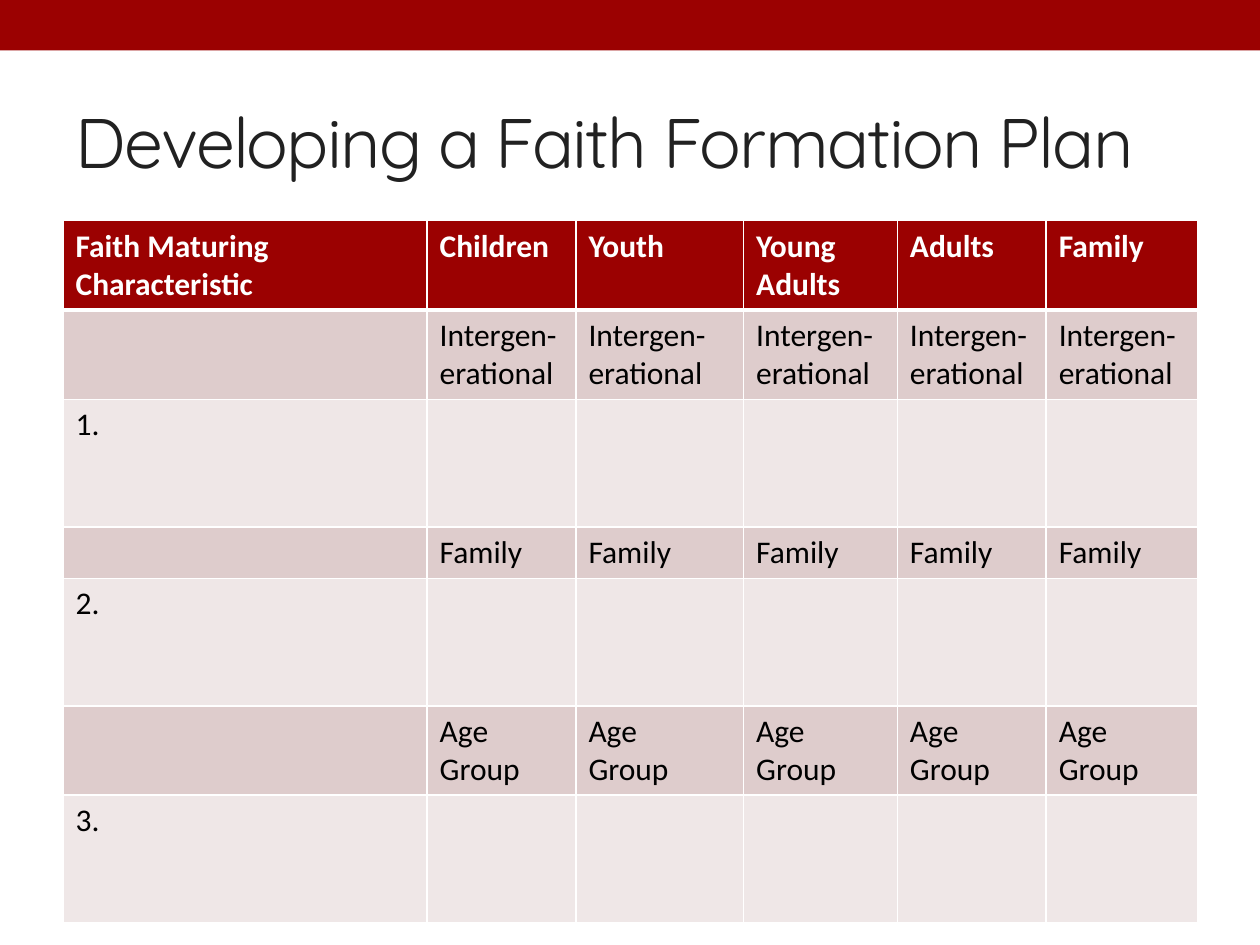
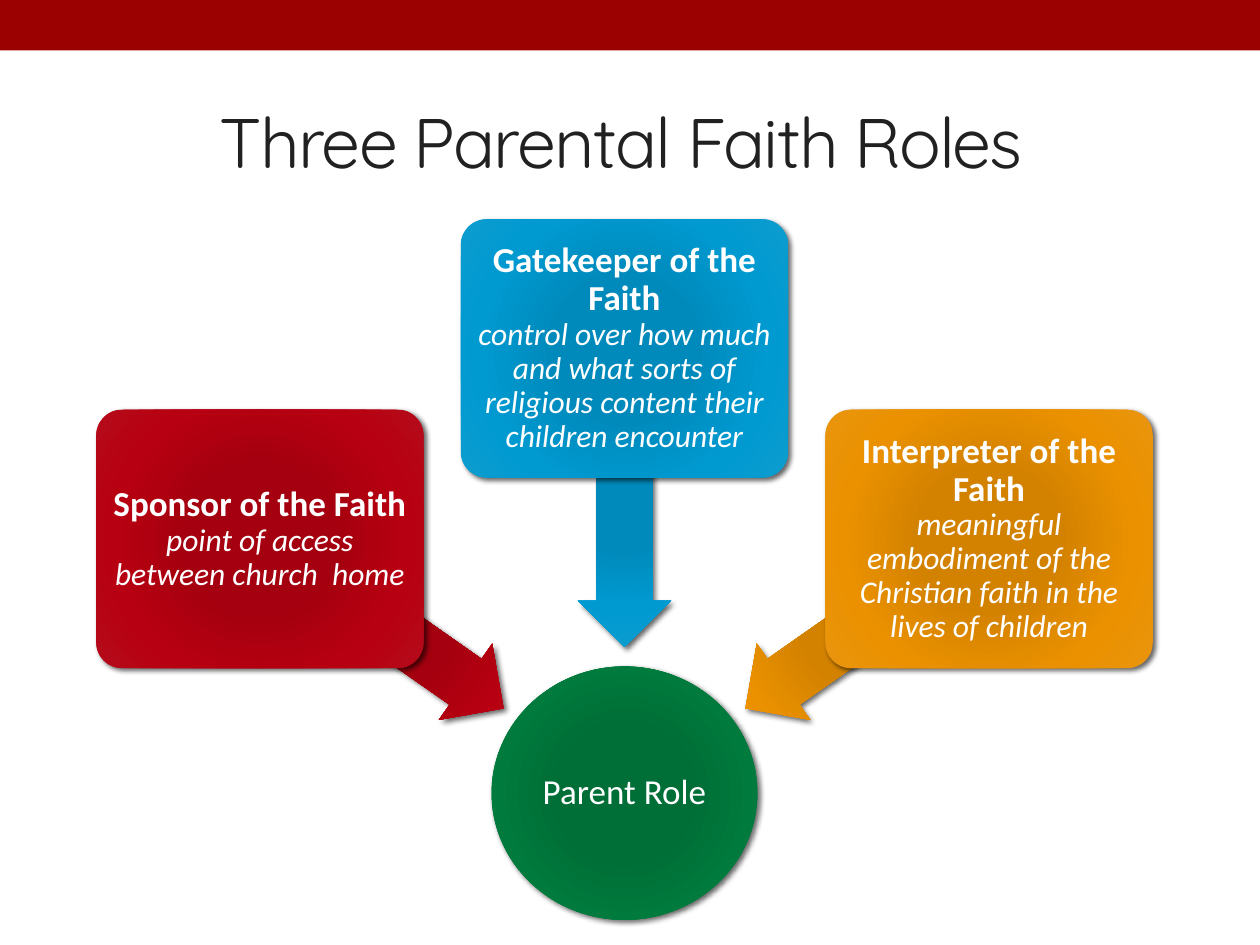
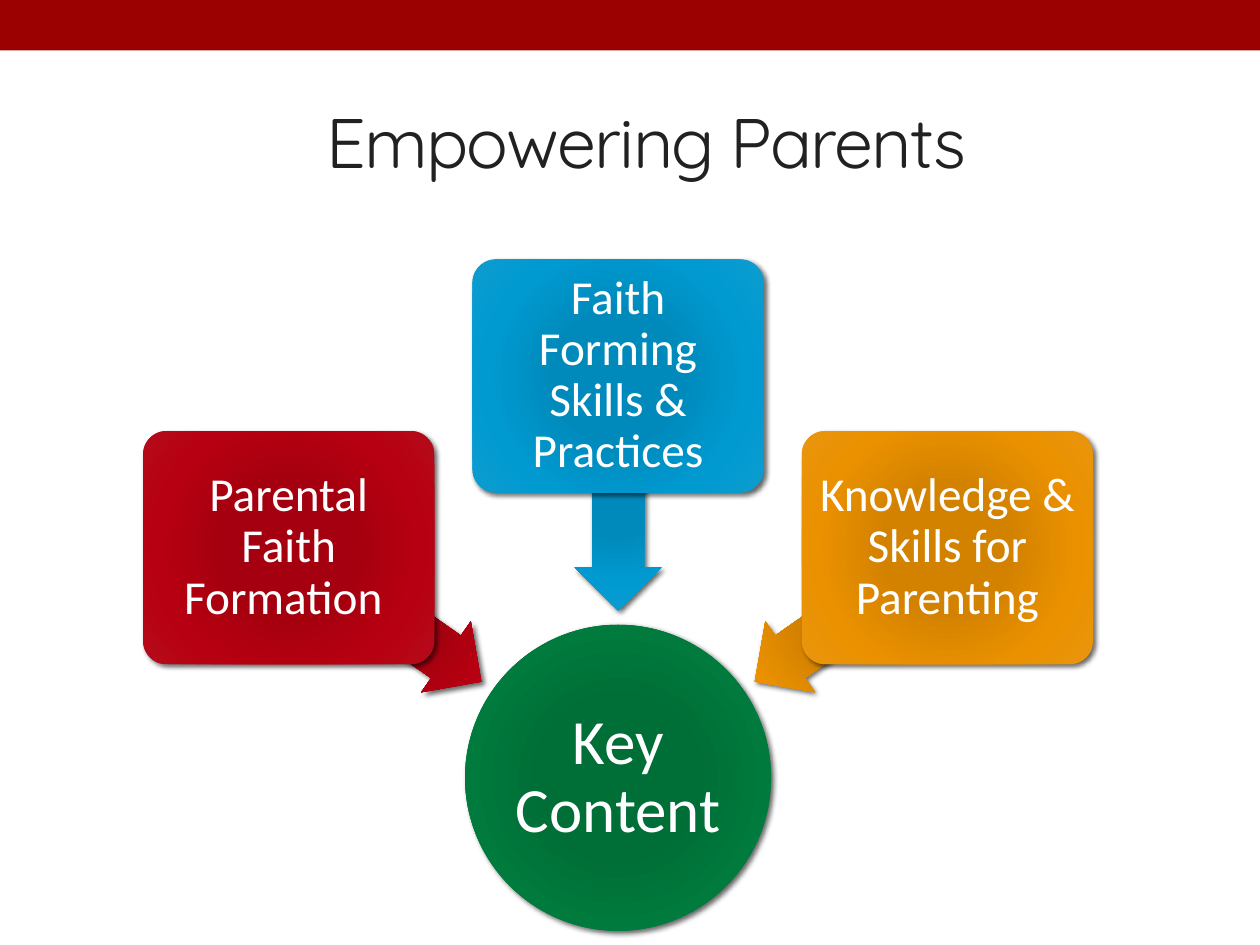
from pptx import Presentation
from pptx.dml.color import RGBColor
from pptx.enum.shapes import MSO_SHAPE as Kind
from pptx.enum.text import MSO_ANCHOR as Anchor, PP_ALIGN as Align
from pptx.oxml import parse_xml
from pptx.oxml.ns import nsdecls, qn
from pptx.util import Cm, Pt

RED, INK, WHITE, BLACK = "9B0101", "212121", "FFFFFF", "000000"
DARK, PALE = "DECCCC", "EFE7E7"
# Gradient colours from the centre outwards
GREEN = ("006E37", "007A3D", "008040")
RUBY = ("A4000F", "B70011", "B50B1B")
BLUE = ("008ABC", "009AD1", "0C9CCE")
GOLD = ("D38200", "EB9100", "E8950E")


def rgb(code):
    return RGBColor.from_string(code)


def put(par, text, size=18, color=WHITE, font="Calibri", bold=False,
        italic=False, align=None, lead=None, track=None):
    run = par.add_run()
    run.text = text
    look = run.font
    look.size, look.name, look.bold, look.italic = Pt(size), font, bold, italic
    look.color.rgb = rgb(color)
    if track:
        run._r.get_or_add_rPr().set("spc", str(track * 100))
    if align:
        par.alignment = align
    if lead:
        par.line_spacing = lead


deck = Presentation()
deck.slide_width, deck.slide_height = Cm(25.4), Cm(19.05)

# Band and title on every slide
heads = [("Developing a Faith Formation Plan", 23.77, Align.LEFT),
         ("Three Parental Faith Roles ", 22.86, Align.CENTER),
         ("Empowering Parents", 23.52, Align.CENTER)]
slides = []
for text, width, align in heads:
    slide = deck.slides.add_slide(deck.slide_layouts[6])
    slides.append(slide)
    band = slide.shapes.add_shape(Kind.RECTANGLE, 0, 0, Cm(25.4), Cm(1.02))
    band.shadow.inherit = False
    band.fill.solid()
    band.fill.fore_color.rgb = rgb(RED)
    band.line.fill.background()
    frame = slide.shapes.add_textbox(Cm(1.27), Cm(1.47), Cm(width), Cm(2.74)).text_frame
    frame.word_wrap = True
    frame.vertical_anchor = Anchor.MIDDLE
    put(frame.paragraphs[0], text, size=40, color=INK, font="Quicksand",
        align=align, track=-1)

# Plan table
wide = [7.34, 3.0, 3.38, 3.1, 3.0, 3.05]
high = [1.8, 1.8, 2.57, 1.04, 2.57, 1.8, 2.57]
blank = [""] * 5
rows = [["Faith Maturing Characteristic", "Children", "Youth", "Young Adults",
         "Adults", "Family"],
        [""] + ["Intergen-erational"] * 5,
        ["1."] + blank,
        [""] + ["Family"] * 5,
        ["2."] + blank,
        ["", "Age Group", "Age\nGroup"] + ["Age Group"] * 3,
        ["3."] + blank]
table = slides[0].shapes.add_table(len(rows), len(wide), Cm(1.27), Cm(4.45),
                                   Cm(sum(wide)), Cm(sum(high))).table
for col, size in zip(table.columns, wide):
    col.width = Cm(size)
for r, row in enumerate(rows):
    table.rows[r].height = Cm(high[r])
    for c, text in enumerate(row):
        cell = table.cell(r, c)
        cell.fill.solid()
        cell.fill.fore_color.rgb = rgb(RED if r == 0 else DARK if r % 2 else PALE)
        # Thin white borders, thicker under the header
        for i, side in enumerate("LRTB"):
            thick = (r, side) in [(0, "B"), (1, "T")]
            cell._tc.get_or_add_tcPr().insert(i, parse_xml(
                f'<a:ln{side} {nsdecls("a")} w="{Pt(3 if thick else 1)}"><a:solidFill>'
                f'<a:srgbClr val="{WHITE}"/></a:solidFill></a:ln{side}>'))
        for i, line in enumerate(text.split("\n") if text else []):
            par = cell.text_frame.add_paragraph() if i else cell.text_frame.paragraphs[0]
            put(par, line, color=BLACK if r else WHITE, bold=r == 0)

# Three boxes pointing to a hub: sizes are (width, height), tops are (side, middle)
charts = [
    dict(slide=slides[1], mid=12.59, hub=("Parent Role", 20, 15.99, 5.36, 5.11, 0.03),
         box=(6.6, 5.21), step=7.35, tops=(8.26, 4.42), pad=0.1, size=20,
         arrow=(6.04, 1.88), reach=4.91, rows=(12.55, 10.03), bold=True,
         texts=[("Sponsor of the Faith", "point of access between church  home"),
                ("Gatekeeper of the Faith", "control over how much and what sorts of "
                 "religious content their children encounter"),
                ("Interpreter of the Faith", "meaningful embodiment of the Christian "
                 "faith in the lives of children")]),
    dict(slide=slides[2], mid=12.46, hub=("Key Content", 36, 15.68, 6.17, 6.17, 0.08),
         box=(5.87, 4.7), step=6.64, tops=(8.69, 5.23), pad=0.15, size=27,
         arrow=(4.75, 1.75), reach=4.7, rows=(12.38, 9.94), bold=False,
         texts=[("Parental Faith Formation ", ""),
                ("Faith Forming Skills & Practices", ""),
                ("Knowledge & Skills for Parenting", "")]),
]
for d in charts:
    # Each part: kind, centre x, centre y, width, height, tones, turn, pad, text runs
    word, size, y, w, h, pad = d["hub"]
    parts = [(Kind.OVAL, d["mid"], y, w, h, GREEN, 0, pad, [(word, size, False, False)])]
    for i, tones in enumerate((RUBY, BLUE, GOLD)):
        side, level = i - 1, i % 2
        w, h = d["box"]
        name, note = d["texts"][i]
        runs = [(name, d["size"], d["bold"], False)]
        if note:
            runs.append((note, 18, False, True))
        parts += [(Kind.LEFT_ARROW, d["mid"] + side * d["reach"], d["rows"][level],
                   *d["arrow"], tones, (215, 270, 325)[i], 0, []),
                  (Kind.ROUNDED_RECTANGLE, d["mid"] + side * d["step"],
                   d["tops"][level] + h / 2, w, h, tones, 0, d["pad"], runs)]

    for kind, x, y, w, h, tones, turn, pad, runs in parts:
        shape = d["slide"].shapes.add_shape(kind, Cm(x - w / 2), Cm(y - h / 2), Cm(w), Cm(h))
        shape.rotation = turn
        if kind == Kind.LEFT_ARROW:
            shape.adjustments[0], shape.adjustments[1] = 0.6, 0.5
        elif kind == Kind.ROUNDED_RECTANGLE:
            shape.adjustments[0] = 0.1

        # Radial fill and soft shadow
        shape.line.fill.background()
        edge = shape._element.spPr.find(qn("a:ln"))
        stops = "".join(f'<a:gs pos="{pos}000"><a:srgbClr val="{tone}"/></a:gs>'
                        for pos, tone in zip((0, 34, 70, 100), tones[:1] + tones))
        edge.addprevious(parse_xml(
            f'<a:gradFill {nsdecls("a")} rotWithShape="1"><a:gsLst>{stops}</a:gsLst>'
            '<a:path path="circle"><a:fillToRect l="100000" t="100000" r="100000" '
            'b="100000"/></a:path></a:gradFill>'))
        edge.addnext(parse_xml(
            f'<a:effectLst {nsdecls("a")}><a:outerShdw blurRad="{Pt(3)}" dist="{Pt(2)}" '
            f'dir="2700000" rotWithShape="0"><a:srgbClr val="{BLACK}">'
            '<a:alpha val="60000"/></a:srgbClr></a:outerShdw></a:effectLst>'))

        # Label
        frame = shape.text_frame
        frame.word_wrap = True
        frame.vertical_anchor = Anchor.MIDDLE
        frame.margin_left = frame.margin_right = Cm(pad)
        frame.margin_top = frame.margin_bottom = Cm(pad)
        par = frame.paragraphs[0]
        for i, (text, size, bold, italic) in enumerate(runs):
            if i:
                par.add_line_break()
            put(par, text, size=size, bold=bold, italic=italic,
                align=Align.CENTER, lead=0.9)

deck.save("out.pptx")
